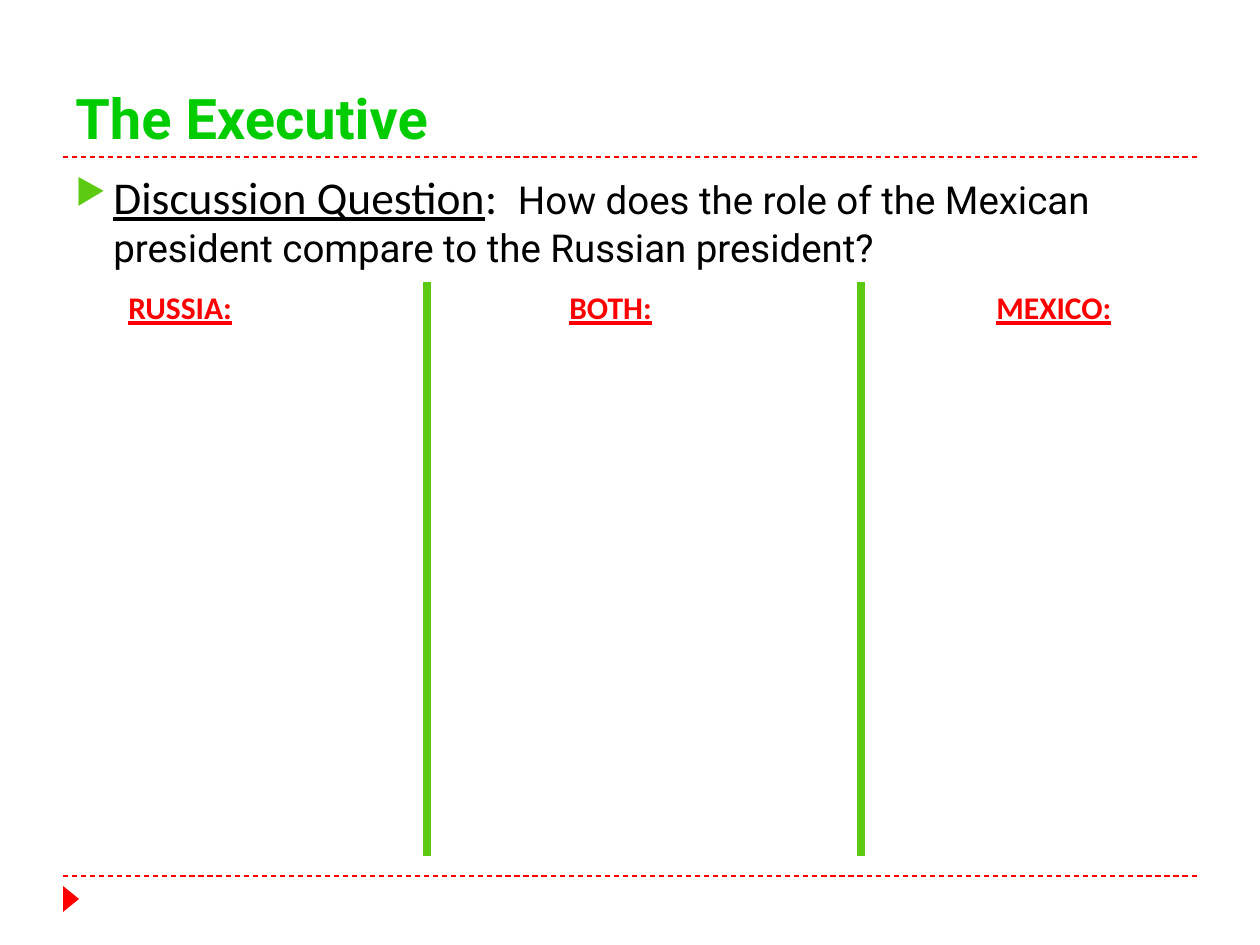
from lxml.etree import SubElement
from pptx import Presentation
from pptx.dml.color import RGBColor
from pptx.enum.dml import MSO_LINE
from pptx.enum.shapes import MSO_CONNECTOR, MSO_SHAPE
from pptx.enum.text import MSO_ANCHOR
from pptx.oxml.ns import qn
from pptx.util import Emu, Pt

HUES = {"red": "FF0000", "title": "00CC00", "lime": "5BCA10", "ink": "000000"}
HEAD = {"name": "Roboto", "size": Pt(32), "bold": True}
TOPIC = {"name": "Calibri", "size": Pt(26), "underline": True}
COLON = {"name": "Calibri", "size": Pt(26)}
QUERY = {"name": "Roboto", "size": Pt(22)}
LABEL = {"name": "Calibri", "size": Pt(18), "bold": True, "underline": True}


def px(num):
    """Turn pixels into EMU."""
    return Emu(round(num * 914400 / 126))


def hue(key):
    """Look up a colour by its name."""
    return RGBColor.from_string(HUES[key])


class Deck:
    """Hold the style and the current slide."""

    def __init__(self):
        """Open a deck with one blank slide."""
        self.file = Presentation()
        self.file.slide_width, self.file.slide_height = px(1260), px(945)
        self.slide = self.file.slides.add_slide(self.file.slide_layouts[6])

    def line(self, start, end, color, width, dash=None):
        """Draw a straight line."""
        line = self.slide.shapes.add_connector(
            MSO_CONNECTOR.STRAIGHT, *map(px, start + end))
        line.line.color.rgb = hue(color)
        line.line.width = Pt(width)
        line.line.dash_style = dash
        SubElement(line._element.spPr, qn("a:effectLst"))

    def marker(self, box, color):
        """Draw a triangle that points right."""
        mark = self.slide.shapes.add_shape(
            MSO_SHAPE.ISOSCELES_TRIANGLE, *map(px, box))
        mark.rotation = 90
        mark.shadow.inherit = False
        mark.fill.solid()
        mark.fill.fore_color.rgb = hue(color)
        mark.line.fill.background()

    def text(self, box, runs, color, anchor=MSO_ANCHOR.TOP, margin=0):
        """Write one paragraph of styled runs and return it."""
        frame = self.slide.shapes.add_textbox(*map(px, box)).text_frame
        frame.word_wrap = True
        frame.vertical_anchor = anchor
        para = frame.paragraphs[0]
        para._p.get_or_add_pPr().set("marL", str(px(margin)))
        for words, style in runs:
            run = para.add_run()
            run.text = words
            run.font.color.rgb = hue(color)
            for key, value in style.items():
                setattr(run.font, key, value)
        return para

    def bullet(self, para, sign, color, size, hang):
        """Give a paragraph a hanging bullet."""
        props = para._p.get_or_add_pPr()
        props.set("indent", str(-px(hang)))
        tint = SubElement(props, qn("a:buClr"))
        SubElement(tint, qn("a:srgbClr"), val=HUES[color])
        SubElement(props, qn("a:buSzPct"), val=str(size * 1000))
        SubElement(props, qn("a:buChar"), char=sign)


def main():
    """Build the slide."""
    deck = Deck()
    for y in (876, 157):
        deck.line((63, y), (1197, y), "red", 0.75, MSO_LINE.DASH)
    deck.marker((58, 891, 26, 16), "red")
    deck.text((63, 21, 1134, 136), [("The Executive", HEAD)], "title",
              MSO_ANCHOR.BOTTOM)
    body = deck.text((63, 163, 1124, 121), [
        ("Discussion Question", TOPIC),
        (":  ", COLON),
        ("How does the role of the Mexican president compare to the "
         "Russian president?", QUERY),
    ], "ink", margin=38)
    body.space_before = Pt(6)
    deck.bullet(body, "▶", "lime", 76, 38)
    for name, x in (("MEXICO:", 921), ("BOTH:", 494), ("RUSSIA:", 53)):
        deck.text((x, 282, 273, 50), [(name, LABEL)], "red", margin=63)
    for x in (427, 861):
        deck.line((x, 282), (x, 856), "lime", 4.5)
    deck.file.save("out.pptx")


if __name__ == "__main__":
    main()
